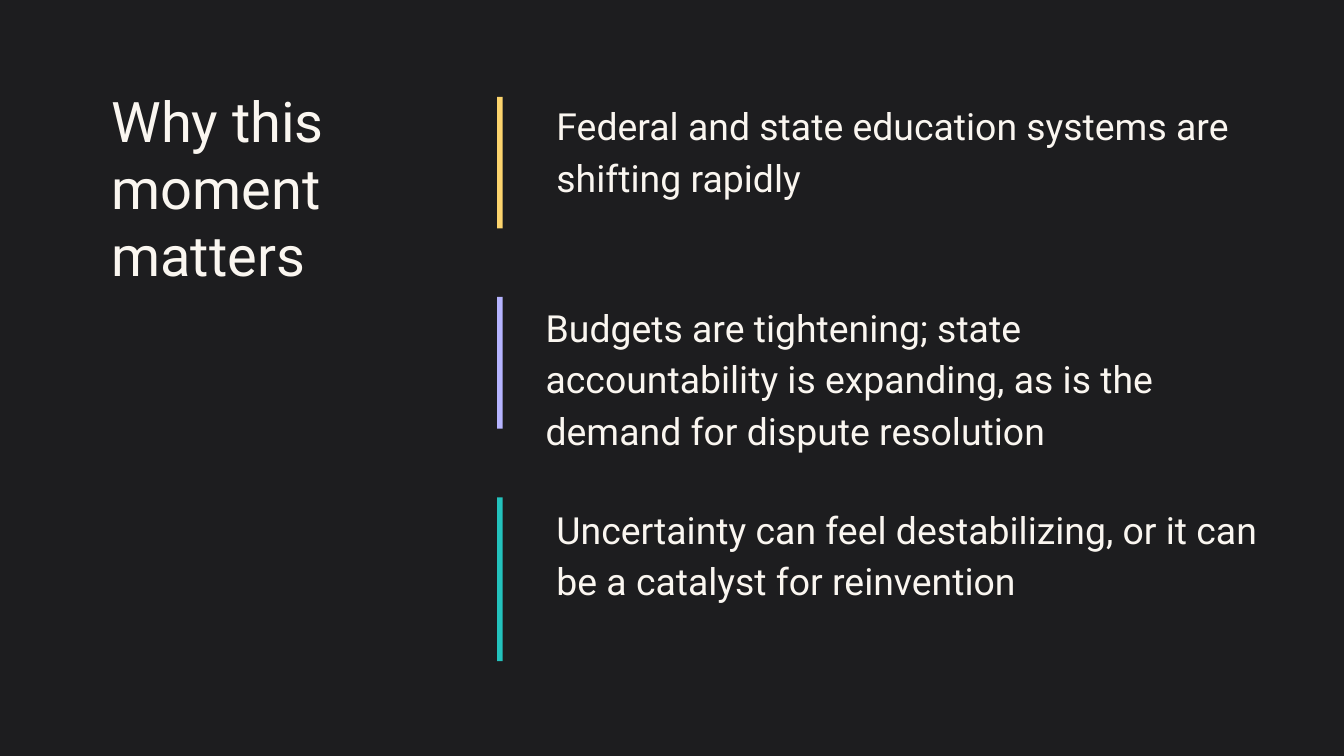
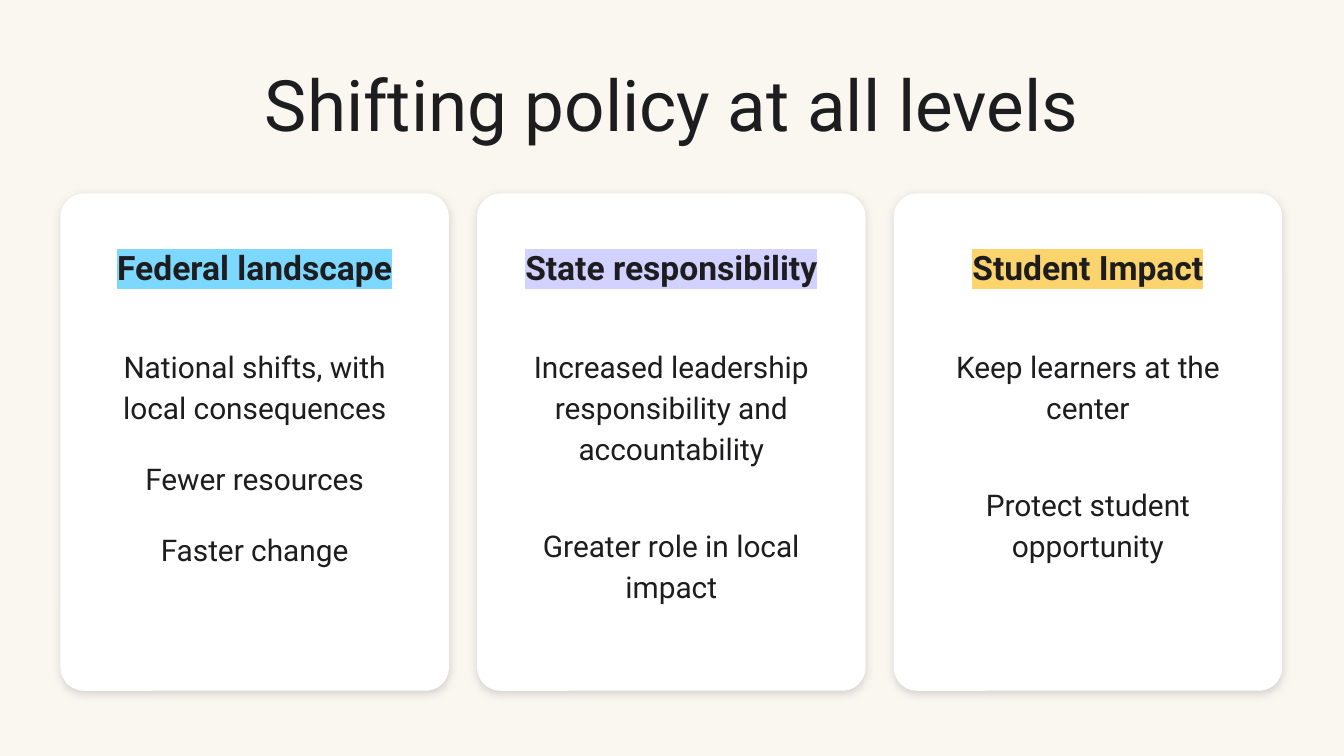
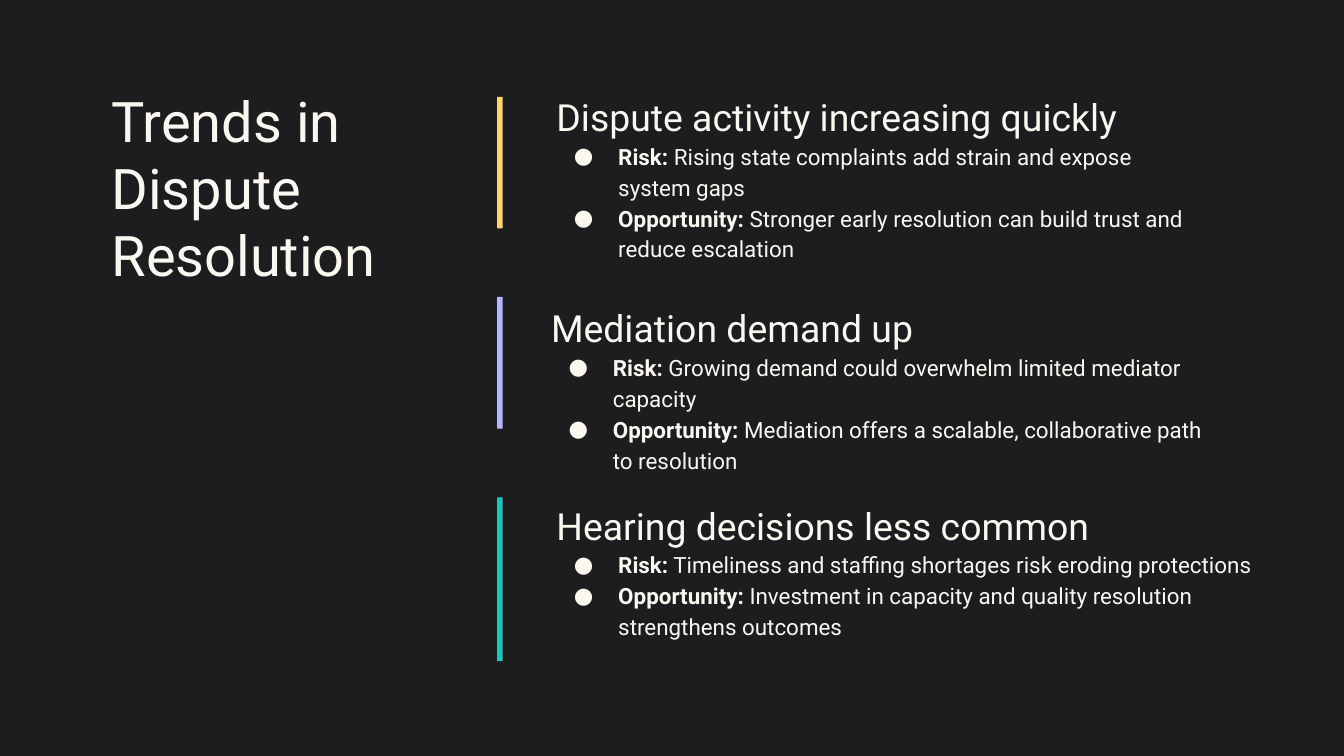
from dataclasses import dataclass
from typing import NamedTuple

from lxml.etree import SubElement
from pptx import Presentation
from pptx.dml.color import RGBColor
from pptx.enum.shapes import MSO_SHAPE as Shape
from pptx.enum.text import MSO_ANCHOR as Anchor, MSO_AUTO_SIZE as AutoSize, PP_ALIGN as Align
from pptx.oxml.ns import qn
from pptx.util import Inches, Pt

SLIDE_WIDTH = Inches(10)
SLIDE_HEIGHT = SLIDE_WIDTH * 9 // 16
CELL = SLIDE_WIDTH // 100  # square grid, 100 columns wide
COMPARISON_LAYOUT, TITLE_ONLY_LAYOUT = 4, 5


@dataclass(frozen=True)
class Theme:
    font: str = "Roboto"
    dark: str = "1D1D1F"
    light: str = "FAF6F0"
    white: str = "FFFFFF"
    shadow: str = "ADADAD"
    yellow: str = "FCD46D"
    violet: str = "B6B4FF"
    teal: str = "23C2BD"
    sky: str = "7DD8FF"
    lilac: str = "D2D1FF"
    side_title: int = 30
    wide_title: int = 38
    heading: int = 20
    point: int = 12
    card_heading: int = 18
    card_text: int = 16
    line_spacing: float = 1.15


THEME = Theme()


class Box(NamedTuple):
    """A place on the slide, in grid cells."""
    left: float
    top: float
    width: float
    height: float


class Bar(NamedTuple):
    height: float
    color: str


class Point(NamedTuple):
    label: str
    detail: str


class Entry(NamedTuple):
    box: Box
    heading: str
    points: tuple[Point, ...] = ()
    indent: float = 0.4


class Card(NamedTuple):
    heading: str
    highlight: str
    lines: tuple[str, ...]
    gap: int  # points between the lines


BAR_LEFT, BAR_TOP, BAR_STEP, BAR_WIDTH = 37, 7.2, 14.9, 0.4
BARS = (Bar(9.8, THEME.yellow), Bar(9.8, THEME.violet), Bar(12.2, THEME.teal))

MOMENT_ENTRIES = (
    Entry(Box(41, 7.2, 52.2, 7.5), "Federal and state education systems are shifting rapidly"),
    Entry(Box(40.6, 22.2, 51.3, 7.5),
          "Budgets are tightening; state accountability is expanding, "
          "as is the demand for dispute resolution", indent=0),
    Entry(Box(41, 37.2, 54.6, 11.7),
          "Uncertainty can feel destabilizing, or it can be a catalyst for reinvention"),
)

TREND_ENTRIES = (
    Entry(Box(41, 6.5, 49.9, 7.5), "Dispute activity increasing quickly", (
        Point("Risk:", " Rising state complaints add strain and expose system gaps"),
        Point("Opportunity:", " Stronger early resolution can build trust and reduce escalation"))),
    Entry(Box(40.6, 22.2, 51.1, 7.5), "Mediation demand up", (
        Point("Risk:", " Growing demand could overwhelm limited mediator capacity"),
        Point("Opportunity:", " Mediation offers a scalable, collaborative path to resolution"))),
    Entry(Box(41, 36.9, 54.6, 11.7), "Hearing decisions less common", (
        Point("Risk:", " Timeliness and staffing shortages risk eroding protections"),
        Point("Opportunity:", " Investment in capacity and quality resolution strengthens outcomes"))),
)

FIRST_CARD = Box(4.5, 14.4, 28.9, 37)
CARD_STEP = 31
CARD_HEADING_GAP = 30
CARDS = (
    Card("Federal landscape", THEME.sky,
         ("National shifts, with local consequences", "Fewer resources", "Faster change"), 16),
    Card("State responsibility", THEME.lilac,
         ("Increased leadership responsibility and accountability",
          "Greater role in local impact"), 30),
    Card("Student Impact", THEME.yellow,
         ("Keep learners at the center", "Protect student opportunity"), 30),
)


def cells(count: float) -> int:
    return round(count * CELL)


def place(shape, box: Box) -> None:
    shape.left, shape.top, shape.width, shape.height = map(cells, box)


def prepare_frame(text_frame, insets: tuple[float, float, float, float]) -> None:
    """Anchor the text at the top, wrapped, with insets (left, top, right, bottom) in cells."""
    text_frame.word_wrap = True
    text_frame.auto_size = AutoSize.NONE
    text_frame.vertical_anchor = Anchor.TOP
    (text_frame.margin_left, text_frame.margin_top,
     text_frame.margin_right, text_frame.margin_bottom) = map(cells, insets)


def format_run(run, size: int, color: str, bold: bool = False) -> None:
    run.font.size = Pt(size)
    run.font.bold = bold
    run.font.name = THEME.font
    run.font.color.rgb = RGBColor.from_string(color)


def format_paragraph(paragraph, align=Align.LEFT, spacing: float = THEME.line_spacing,
                     before: float = 0) -> None:
    paragraph.alignment = align
    paragraph.line_spacing = spacing
    paragraph.space_before = Pt(before)
    paragraph.space_after = Pt(0)


def set_indent(paragraph, margin: float, first_line: float = 0, bullet: str = "") -> None:
    properties = paragraph._p.get_or_add_pPr()
    properties.set("marL", str(cells(margin)))
    properties.set("indent", str(cells(first_line)))
    if bullet:
        color = SubElement(properties, qn("a:buClr"))
        SubElement(color, qn("a:srgbClr"), val=THEME.light)
        SubElement(properties, qn("a:buFont"), typeface=THEME.font)
        SubElement(properties, qn("a:buChar"), char=bullet)
    else:
        SubElement(properties, qn("a:buNone"))


def highlight_run(run, color: str) -> None:
    properties = run._r.get_or_add_rPr()
    highlight = SubElement(properties, qn("a:highlight"))
    SubElement(highlight, qn("a:srgbClr"), val=color)
    properties.find(qn("a:solidFill")).addnext(highlight)


def add_soft_shadow(shape) -> None:
    effects = shape._element.spPr.find(qn("a:effectLst"))
    shadow = SubElement(effects, qn("a:outerShdw"), blurRad=str(Pt(4.5)), dist=str(Pt(1.5)),
                        dir="5400000", algn="bl", rotWithShape="0")
    color = SubElement(shadow, qn("a:srgbClr"), val=THEME.shadow)
    SubElement(color, qn("a:alpha"), val="50000")


def add_filled_shape(slide, kind, box: Box, color: str):
    shape = slide.shapes.add_shape(kind, *map(cells, box))
    shape.shadow.inherit = False
    shape.fill.solid()
    shape.fill.fore_color.rgb = RGBColor.from_string(color)
    shape.line.fill.background()
    return shape


def add_slide(presentation, layout: int, background: str):
    slide = presentation.slides.add_slide(presentation.slide_layouts[layout])
    slide.background.fill.solid()
    slide.background.fill.fore_color.rgb = RGBColor.from_string(background)
    return slide


def set_title(slide, text: str, box: Box, size: int, color: str,
              align=Align.LEFT, spacing: float = 1.0) -> None:
    title = slide.shapes.title
    place(title, box)
    prepare_frame(title.text_frame, (0, 0, 0, 0))
    title.text_frame.text = text
    paragraph = title.text_frame.paragraphs[0]
    format_paragraph(paragraph, align, spacing)
    format_run(paragraph.runs[0], size, color)


def fill_entry(placeholder, entry: Entry) -> None:
    place(placeholder, entry.box)
    text_frame = placeholder.text_frame
    prepare_frame(text_frame, (0, 0, 1, 0))
    text_frame.text = entry.heading
    heading = text_frame.paragraphs[0]
    format_paragraph(heading)
    set_indent(heading, entry.indent)
    format_run(heading.runs[0], THEME.heading, THEME.light)
    for point in entry.points:
        paragraph = text_frame.add_paragraph()
        paragraph.text = point.label
        paragraph.add_run().text = point.detail
        format_paragraph(paragraph)
        set_indent(paragraph, 5, -3.3, "●")
        label, detail = paragraph.runs
        format_run(label, THEME.point, THEME.light, bold=True)
        format_run(detail, THEME.point, THEME.light)


def add_entries_slide(presentation, title: str, title_box: Box, entries: tuple[Entry, ...]) -> None:
    """Dark slide: title at the left, three entries beside coloured bars."""
    slide = add_slide(presentation, COMPARISON_LAYOUT, THEME.dark)
    set_title(slide, title, title_box, THEME.side_title, THEME.light)
    for row, bar in enumerate(BARS):
        bar_box = Box(BAR_LEFT, BAR_TOP + row * BAR_STEP, BAR_WIDTH, bar.height)
        add_filled_shape(slide, Shape.RECTANGLE, bar_box, bar.color)
    bodies = [shape for shape in slide.placeholders if shape.placeholder_format.idx > 0]
    for body, entry in zip(bodies, entries):
        fill_entry(body, entry)
    for unused in bodies[len(entries):]:
        unused._element.getparent().remove(unused._element)


def add_card(slide, card: Card, box: Box) -> None:
    shape = add_filled_shape(slide, Shape.ROUNDED_RECTANGLE, box, THEME.white)
    shape.adjustments[0] = 0.06
    add_soft_shadow(shape)
    prepare_frame(shape.text_frame, (2, 3, 2, 1))
    shape.text_frame.text = "\n".join((card.heading, *card.lines))
    heading, *lines = shape.text_frame.paragraphs
    format_paragraph(heading, Align.CENTER)
    format_run(heading.runs[0], THEME.card_heading, THEME.dark, bold=True)
    highlight_run(heading.runs[0], card.highlight)
    for number, line in enumerate(lines):
        format_paragraph(line, Align.CENTER, before=card.gap if number else CARD_HEADING_GAP)
        format_run(line.runs[0], THEME.card_text, THEME.dark)


def add_cards_slide(presentation) -> None:
    slide = add_slide(presentation, TITLE_ONLY_LAYOUT, THEME.light)
    set_title(slide, "Shifting policy at all levels", Box(10.6, 5, 78.8, 5),
              THEME.wide_title, THEME.dark, Align.CENTER, 0.95)
    for column, card in enumerate(CARDS):
        add_card(slide, card, FIRST_CARD._replace(left=FIRST_CARD.left + column * CARD_STEP))


def main() -> None:
    presentation = Presentation()
    presentation.slide_width, presentation.slide_height = SLIDE_WIDTH, SLIDE_HEIGHT
    add_entries_slide(presentation, "Why this moment matters",
                      Box(8.3, 6.4, 22.9, 13.5), MOMENT_ENTRIES)
    add_cards_slide(presentation)
    add_entries_slide(presentation, "Trends in Dispute Resolution",
                      Box(8.3, 6.4, 22.4, 9.8), TREND_ENTRIES)
    presentation.save("out.pptx")


if __name__ == "__main__":
    main()
